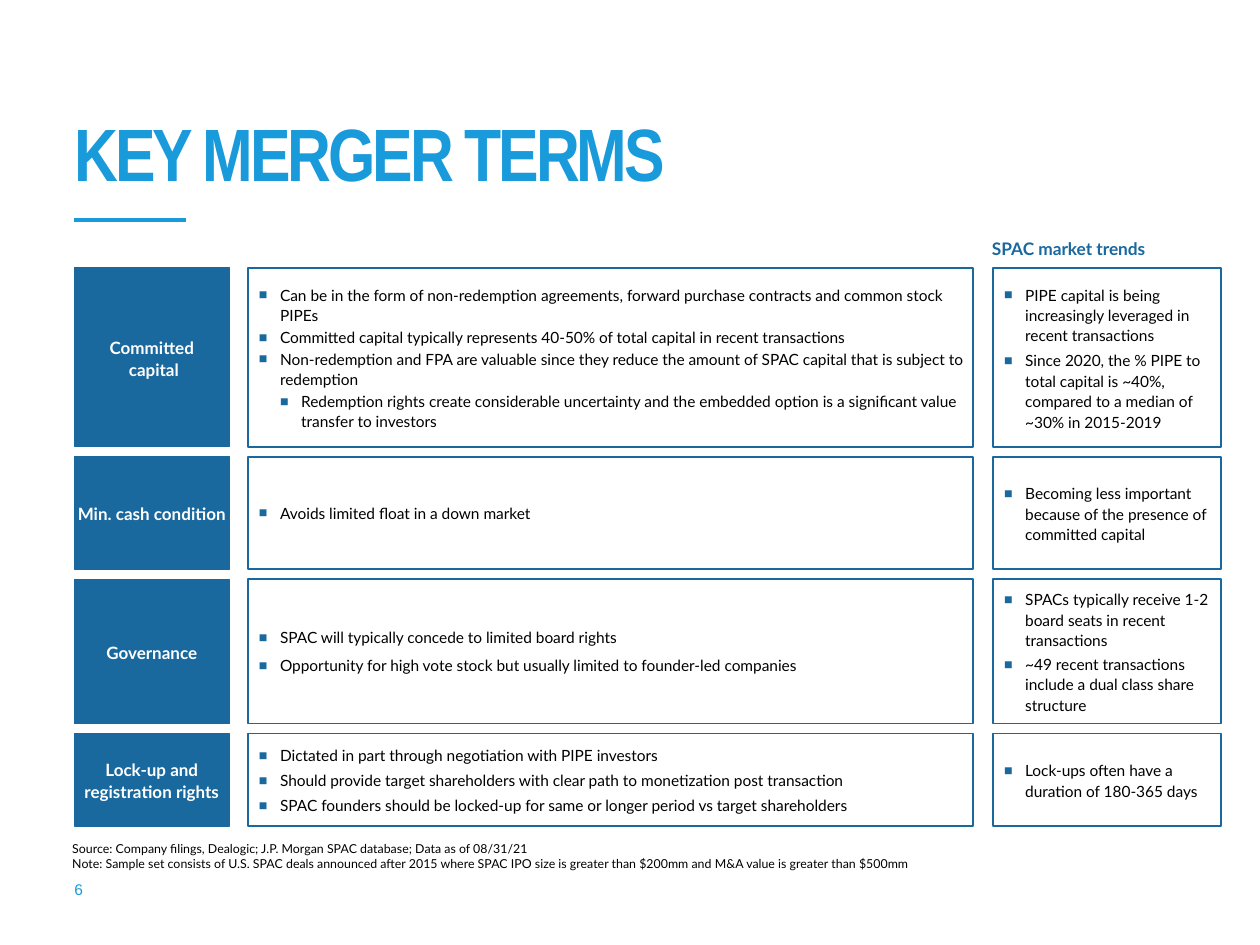
"""Build the slide of key merger terms with SPAC market trends."""
import lxml.etree
import pptx
import pptx.dml.color
import pptx.enum.shapes
import pptx.enum.text
import pptx.oxml.ns
import pptx.util

PX = 9144
BLUE, SKY, WHITE, BLACK = "19689E", "199ADB", "FFFFFF", "000000"
PP = pptx.enum.text.PP_ALIGN
ANCHOR = pptx.enum.text.MSO_ANCHOR


def rgb(hex_color):
    return pptx.dml.color.RGBColor.from_string(hex_color)


def write(sp, text, font, size, color, bold=False, spacing=1.0, before=0,
          anchor=ANCHOR.TOP, align=PP.LEFT, insets=(0, 0, 0, 0), bullets=False):
    tf = sp.text_frame
    tf.word_wrap = True
    tf.vertical_anchor = anchor
    tf.margin_left, tf.margin_top, tf.margin_right, tf.margin_bottom = [n * PX for n in insets]
    tf.text = text.replace("\t", "")
    for i, (p, line) in enumerate(zip(tf.paragraphs, text.split("\n"))):
        p.alignment = align
        p.line_spacing = spacing
        if i:
            p.space_before = pptx.util.Pt(before)
        if bullets:
            p.level = line.count("\t")
            pPr = p._p.get_or_add_pPr()
            pPr.set("marL", str(19 * PX * (p.level + 1)))
            pPr.set("indent", str(-19 * PX))
            qn = pptx.oxml.ns.qn
            buClr = lxml.etree.SubElement(pPr, qn("a:buClr"))
            lxml.etree.SubElement(buClr, qn("a:srgbClr"), val=BLUE)
            lxml.etree.SubElement(pPr, qn("a:buSzPct"), val="92000")
            lxml.etree.SubElement(pPr, qn("a:buFont"), typeface="Arial")
            lxml.etree.SubElement(pPr, qn("a:buChar"), char="■")
        for r in p.runs:
            r.font.name = font
            r.font.size = pptx.util.Pt(size)
            r.font.bold = bold
            r.font.color.rgb = rgb(color)


prs = pptx.Presentation()
prs.slide_width, prs.slide_height = 1133 * PX, 850 * PX
s = prs.slides.add_slide(prs.slide_layouts[6])

rule = s.shapes.add_connector(pptx.enum.shapes.MSO_CONNECTOR.STRAIGHT,
                              67 * PX, 198 * PX, 167 * PX, 198 * PX)
rule.line.color.rgb = rgb(SKY)
rule.line.width = pptx.util.Pt(3)
lxml.etree.SubElement(rule._element.spPr, pptx.oxml.ns.qn("a:effectLst"))

title = s.shapes.add_textbox(67 * PX, 50 * PX, 1000 * PX, 129 * PX)
write(title, "KEY MERGER TERMS", "Arial Narrow", 48, SKY, bold=True, spacing=0.7,
      anchor=ANCHOR.BOTTOM, insets=(0, 5, 10, 5))
title.text_frame.paragraphs[0].runs[0]._r.get_or_add_rPr().set("spc", "-200")

number = s.shapes.add_textbox(67 * PX, 762 * PX, 26 * PX, 46 * PX)
write(number, "6", "Arial", 10, SKY, anchor=ANCHOR.BOTTOM)

heading = s.shapes.add_textbox(892 * PX, 212 * PX, 206 * PX, 20 * PX)
write(heading, "SPAC market trends", "Lato", 11.2, BLUE, bold=True, spacing=1.1)

source = s.shapes.add_textbox(65 * PX, 757 * PX, 997 * PX, 27 * PX)
write(source, "Source: Company filings, Dealogic; J.P. Morgan SPAC database; Data as of 08/31/21\n"
      "Note: Sample set consists of U.S. SPAC deals announced after 2015 where SPAC IPO size "
      "is greater than $200mm and M&A value is greater than $500mm", "Lato", 8, BLACK)

columns = [(67, 139), (223, 652), (893, 205)]
rows = [
    (161, "Committed\v capital",
     (1.1, 1, "Can be in the form of non-redemption agreements, forward purchase contracts "
              "and common stock PIPEs\n"
              "Committed capital typically represents 40-50% of total capital in recent transactions\n"
              "Non-redemption and FPA are valuable since they reduce the amount of SPAC capital "
              "that is subject to redemption\n"
              "\tRedemption rights create considerable uncertainty and the embedded option "
              "is a significant value transfer to investors"),
     (1.1, 3, "PIPE capital is being increasingly leveraged in recent transactions\n"
              "Since 2020, the % PIPE to total capital is ~40%, compared to a median of "
              "~30% in 2015-2019")),
    (101, "Min. cash condition",
     (1.0, 6, "Avoids limited float in a down market"),
     (1.1, 3, "Becoming less important because of the presence of committed capital")),
    (130, "Governance",
     (1.0, 6, "SPAC will typically concede to limited board rights\n"
              "Opportunity for high vote stock but usually limited to founder-led companies"),
     (1.1, 2, "SPACs typically receive 1-2 board seats in recent transactions\n"
              "~49 recent transactions include a dual class share structure")),
    (83, "Lock-up and registration rights",
     (1.1, 3, "Dictated in part through negotiation with PIPE investors\n"
              "Should provide target shareholders with clear path to monetization post transaction\n"
              "SPAC founders should be locked-up for same or longer period vs target shareholders"),
     (1.1, 6, "Lock-ups often have a duration of 180-365 days")),
]

top = 241
for height, term, details, trends in rows:
    cells = [(1.1, 0, term), details, trends]
    for i, ((left, width), (spacing, before, text)) in enumerate(zip(columns, cells)):
        sp = s.shapes.add_shape(pptx.enum.shapes.MSO_SHAPE.RECTANGLE,
                                left * PX, top * PX, width * PX, height * PX)
        sp.shadow.inherit = False
        sp.line.color.rgb = rgb(BLUE)
        if i == 0:
            sp.fill.solid()
            sp.fill.fore_color.rgb = rgb(BLUE)
            sp.line.width = pptx.util.Pt(0.75)
            write(sp, text, "Lato", 11, WHITE, bold=True, spacing=spacing,
                  anchor=ANCHOR.MIDDLE, align=PP.CENTER, insets=(0, 4, 0, 4))
        else:
            sp.fill.background()
            sp.line.width = pptx.util.Pt(1)
            write(sp, text, "Lato", 10, BLACK, spacing=spacing, before=before,
                  anchor=ANCHOR.MIDDLE, insets=(10, 4, 8, 4), bullets=True)
    top += height + 9

prs.save("out.pptx")
